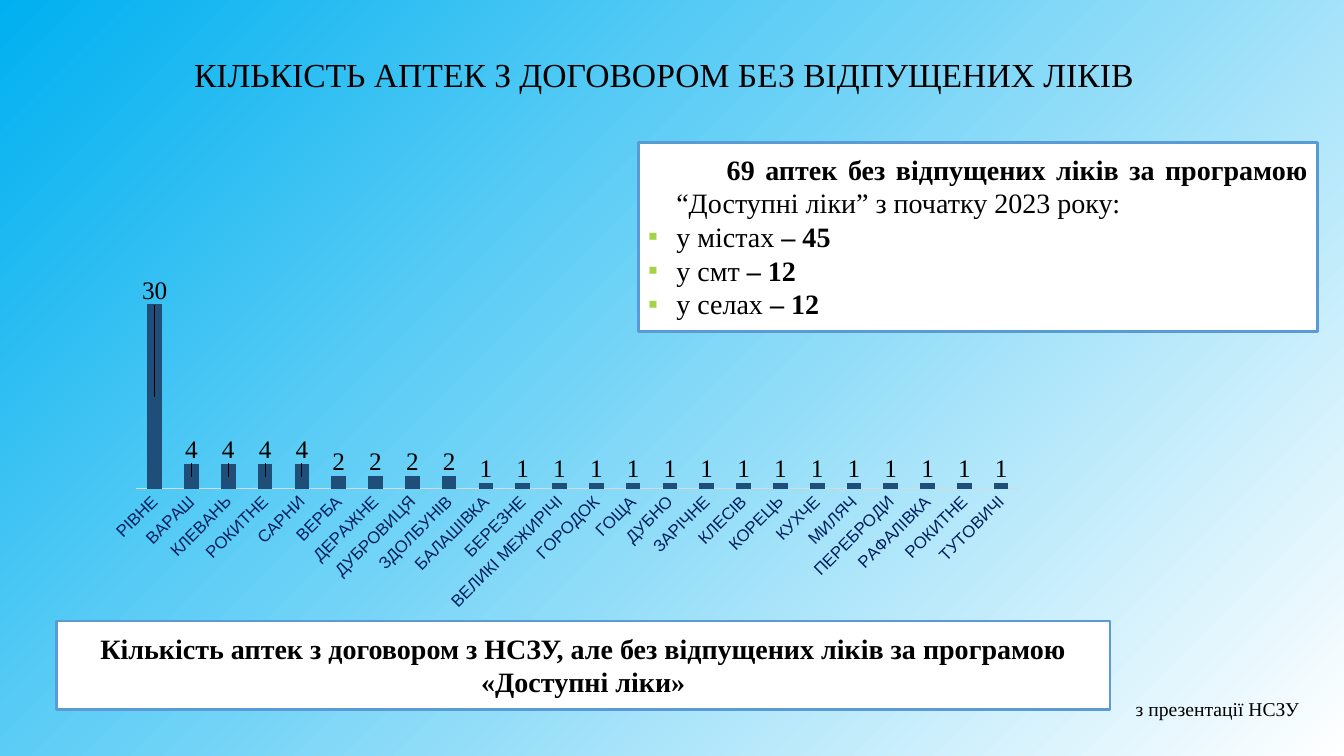
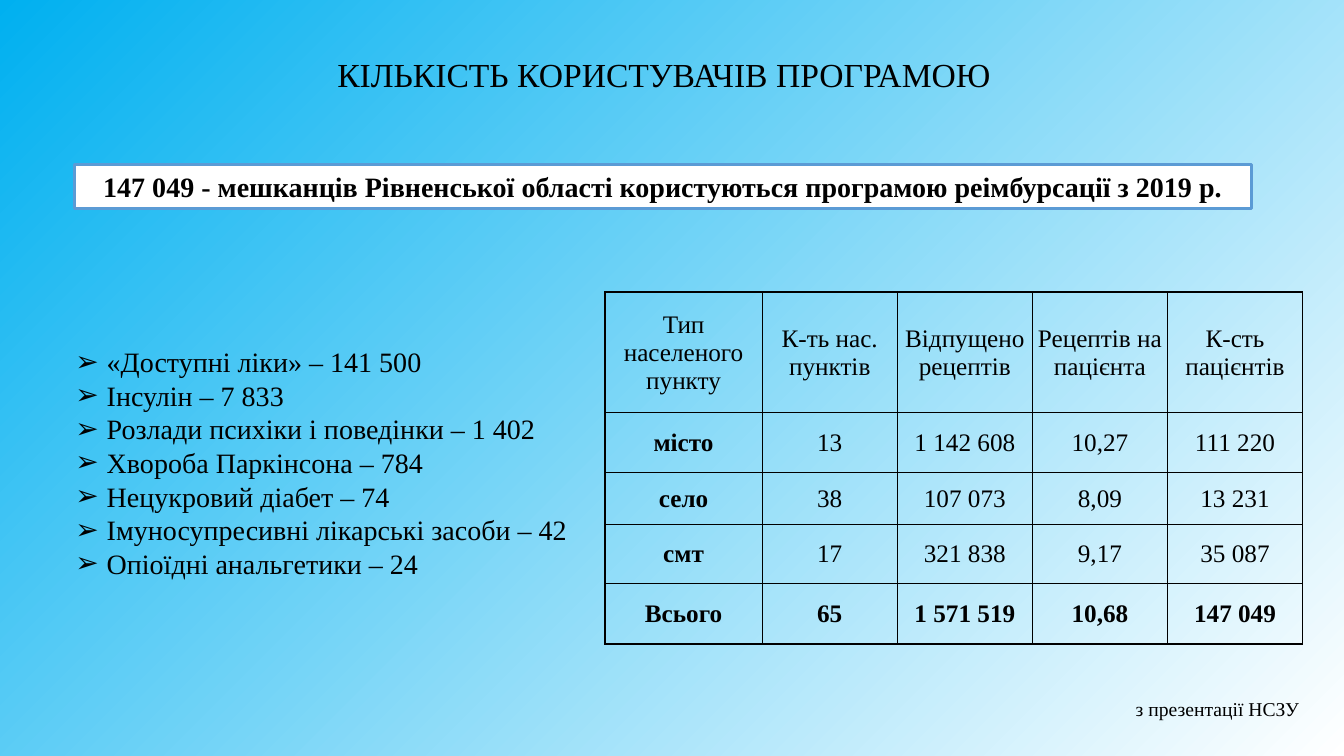
from dataclasses import dataclass

from lxml import etree
from pptx import Presentation
from pptx import util as u
from pptx.chart.data import CategoryChartData
from pptx.dml.color import RGBColor
from pptx.enum import chart as ch, shapes, text as tx
from pptx.oxml import parse_xml
from pptx.oxml.ns import nsdecls, qn

LEFT, CENTER, JUSTIFY = tx.PP_ALIGN.LEFT, tx.PP_ALIGN.CENTER, tx.PP_ALIGN.JUSTIFY
TOP, MIDDLE = tx.MSO_ANCHOR.TOP, tx.MSO_ANCHOR.MIDDLE


@dataclass(frozen=True)
class Theme:
    serif: str = "Times New Roman"
    sans: str = "Arial"
    ink: str = "000000"
    paper: str = "FFFFFF"
    sky: str = "00B0F0"
    frame: str = "5B9BD5"
    bar: str = "1F4E79"
    category: str = "002060"
    axis: str = "D9D9D9"
    bullet: str = "A3D448"
    title_size: int = 24
    body_size: int = 20
    table_size: int = 18
    source_size: int = 14
    category_size: int = 12
    chart_size: int = 10


THEME = Theme()


def rgb(value):
    return RGBColor.from_string(value)


def style_font(font, size, color=THEME.ink, name=THEME.serif, bold=False):
    font.size, font.name, font.bold = u.Pt(size), name, bold
    font.color.rgb = rgb(color)


def add_bullet(paragraph, char, color, hang):
    props = paragraph._p.get_or_add_pPr()
    props.set("marL", str(u.Inches(hang)))
    props.set("indent", str(-u.Inches(hang)))
    tint = etree.SubElement(etree.SubElement(props, qn("a:buClr")), qn("a:srgbClr"))
    tint.set("val", color)
    etree.SubElement(props, qn("a:buFont")).set("typeface", THEME.sans)
    etree.SubElement(props, qn("a:buChar")).set("char", char)


def write(frame, paragraphs, size=THEME.body_size, align=LEFT, anchor=TOP,
          bold=False, inset=(0.1, 0.05), grow=False):
    """Fill a frame; each paragraph is a string or a list of (text, bold) runs."""
    frame.word_wrap = True
    frame.vertical_anchor = anchor
    frame.margin_left = frame.margin_right = u.Inches(inset[0])
    frame.margin_top = frame.margin_bottom = u.Inches(inset[1])
    if grow:
        frame.auto_size = tx.MSO_AUTO_SIZE.SHAPE_TO_FIT_TEXT
    for index, content in enumerate(paragraphs):
        paragraph = frame.paragraphs[0] if index == 0 else frame.add_paragraph()
        paragraph.alignment = align
        runs = [(content, bold)] if isinstance(content, str) else content
        for words, heavy in runs:
            run = paragraph.add_run()
            run.text = words
            style_font(run.font, size, bold=heavy)
    return frame.paragraphs


class Deck:
    def __init__(self):
        self.prs = Presentation()
        self.prs.slide_width, self.prs.slide_height = u.Inches(13.33), u.Inches(7.5)
        self.slide = None

    def start_slide(self, title):
        """Add a slide with the shared background, title and source note."""
        self.slide = self.prs.slides.add_slide(self.prs.slide_layouts[6])
        fill = self.slide.background.fill
        fill.gradient()
        fill.gradient_angle = 315
        for stop, color, place in zip(fill.gradient_stops, (THEME.sky, THEME.paper), (0, 1)):
            stop.color.rgb, stop.position = rgb(color), place
        self.label((0.33, 0.25, 12.51, 0.97), [title], size=THEME.title_size,
                   align=CENTER, anchor=MIDDLE)
        self.label((11.01, 6.84, 2.13, 0.39), ["з презентації НСЗУ"],
                   size=THEME.source_size, align=CENTER, anchor=MIDDLE)

    def label(self, at, paragraphs, **style):
        box = self.slide.shapes.add_textbox(*map(u.Inches, at))
        return write(box.text_frame, paragraphs, **style)

    def panel(self, at, paragraphs, **style):
        box = self.slide.shapes.add_shape(shapes.MSO_SHAPE.RECTANGLE, *map(u.Inches, at))
        box.shadow.inherit = False
        box.fill.solid()
        box.fill.fore_color.rgb = rgb(THEME.paper)
        box.line.color.rgb, box.line.width = rgb(THEME.frame), u.Pt(2)
        return write(box.text_frame, paragraphs, grow=True, **style)

    def column_chart(self, at, counts):
        data = CategoryChartData(number_format="#,##0")
        data.categories = [town for town, _ in counts]
        data.add_series("Series 1", [count for _, count in counts])
        chart = self.slide.shapes.add_chart(
            ch.XL_CHART_TYPE.COLUMN_STACKED, *map(u.Inches, at), data).chart
        chart.has_legend = chart.has_title = False
        style_font(chart.font, THEME.chart_size, name=THEME.sans)

        towns, values = chart.category_axis, chart.value_axis
        towns.major_tick_mark = ch.XL_TICK_MARK.NONE
        towns.format.line.color.rgb, towns.format.line.width = rgb(THEME.axis), u.Pt(0.75)
        style_font(towns.tick_labels.font, THEME.category_size, THEME.category, THEME.sans)
        towns._element.find(qn("c:txPr")).find(qn("a:bodyPr")).set("rot", "-2700000")
        values.visible = values.has_major_gridlines = False
        values.minimum_scale, values.maximum_scale = 0, 35

        plot = chart.plots[0]
        plot.gap_width, plot.overlap, plot.vary_by_categories = 150, 100, False
        bars = plot.series[0]
        bars.format.fill.solid()
        bars.format.fill.fore_color.rgb = rgb(THEME.bar)
        self.lift_labels(bars, [count for _, count in counts], at[3])

    @staticmethod
    def lift_labels(bars, counts, chart_height, unit=0.06, gap=0.14):
        """Raise each centred value label from mid-bar to just above the bar."""
        labels = bars.data_labels
        labels.show_value, labels.number_format = True, "#,##0"
        labels.number_format_is_linked = False
        style_font(labels.font, THEME.table_size)
        for index in range(len(counts)):
            label = bars.points[index].data_label
            label.position = ch.XL_LABEL_POSITION.CENTER
            style_font(label.font, THEME.table_size)
        for count, element in zip(counts, labels._element.findall(qn("c:dLbl"))):
            shift = -(count * unit / 2 + gap) / chart_height
            element.insert(1, parse_xml(
                f'<c:layout {nsdecls("c")}><c:manualLayout><c:x val="0"/>'
                f'<c:y val="{shift:.4f}"/></c:manualLayout></c:layout>'))

    def table(self, at, widths, heights, rows):
        grid = self.slide.shapes.add_table(
            len(rows), len(widths), *map(u.Inches, at)).table
        grid.first_row = grid.horz_banding = False
        for column, width in zip(grid.columns, widths):
            column.width = u.Inches(width)
        for row, height in zip(grid.rows, heights):
            row.height = u.Inches(height)
        last = len(rows) - 1
        for r, row in enumerate(rows):
            for c, words in enumerate(row):
                cell = grid.cell(r, c)
                write(cell.text_frame, [words], size=THEME.table_size, align=CENTER,
                      bold=r == last or (c == 0 and r > 0))
                cell.vertical_anchor = MIDDLE
                cell.margin_left = cell.margin_right = cell.margin_top = u.Inches(0.01)
                cell.margin_bottom = 0
                cell.fill.background()
                self.border(cell, top=1.5 if r == 0 else 1, bottom=1.5 if r == last else 1)

    @staticmethod
    def border(cell, top, bottom):
        props = cell._tc.get_or_add_tcPr()
        sides = (("lnL", 1), ("lnR", 1), ("lnT", top), ("lnB", bottom))
        for place, (side, width) in enumerate(sides):
            props.insert(place, parse_xml(
                f'<a:{side} {nsdecls("a")} w="{u.Pt(width)}"><a:solidFill>'
                f'<a:srgbClr val="{THEME.ink}"/></a:solidFill></a:{side}>'))


IDLE_PHARMACIES = [("РІВНЕ", 30)] + [
    (town, count)
    for count, towns in (
        (4, "ВАРАШ,КЛЕВАНЬ,РОКИТНЕ,САРНИ"),
        (2, "ВЕРБА,ДЕРАЖНЕ,ДУБРОВИЦЯ,ЗДОЛБУНІВ"),
        (1, "БАЛАШІВКА,БЕРЕЗНЕ,ВЕЛИКІ МЕЖИРІЧІ,ГОРОДОК,ГОЩА,ДУБНО,ЗАРІЧНЕ,КЛЕСІВ,"
            "КОРЕЦЬ,КУХЧЕ,МИЛЯЧ,ПЕРЕБРОДИ,РАФАЛІВКА,РОКИТНЕ,ТУТОВИЧІ"),
    )
    for town in towns.split(",")
]

PROGRAMMES = [
    "«Доступні ліки» – 141 500",
    "Інсулін – 7 833",
    "Розлади психіки і поведінки – 1 402",
    "Хвороба Паркінсона – 784",
    "Нецукровий діабет – 74",
    "Імуносупресивні лікарські засоби – 42",
    "Опіоїдні анальгетики – 24",
]

SETTLEMENTS = [
    ("Тип населеного пункту", "К-ть нас. пунктів", "Відпущено рецептів",
     "Рецептів на пацієнта", "К-сть пацієнтів"),
    ("місто", "13", "1 142 608", "10,27", "111 220"),
    ("село", "38", "107 073", "8,09", "13 231"),
    ("смт", "17", "321 838", "9,17", "35 087"),
    ("Всього", "65", "1 571 519", "10,68", "147 049"),
]


def pharmacies_slide(deck):
    deck.start_slide("КІЛЬКІСТЬ АПТЕК З ДОГОВОРОМ БЕЗ ВІДПУЩЕНИХ ЛІКІВ")
    deck.panel((0.56, 6.16, 10.45, 0.88),
               ["Кількість аптек з договором з НСЗУ, але без відпущених ліків "
                "за програмою «Доступні ліки»"],
               align=CENTER, bold=True, inset=(0.1, 0.1))
    places = (("у містах ", 45), ("у смт ", 12), ("у селах ", 12))
    summary, *breakdown = deck.panel(
        (6.33, 1.41, 6.74, 1.88),
        [[("\t69 аптек без відпущених ліків за програмою ", True),
          ("“Доступні ліки” з початку 2023 року:", False)]]
        + [[(place, False), (f"– {count}", True)] for place, count in places],
        inset=(0.1, 0.1))
    summary.alignment = JUSTIFY
    summary._p.get_or_add_pPr().set("marL", str(u.Inches(0.28)))
    for line in breakdown:
        add_bullet(line, "▪", THEME.bullet, 0.28)
    deck.column_chart((0.93, 2.64, 9.37, 3.49), IDLE_PHARMACIES)


def users_slide(deck):
    deck.start_slide("КІЛЬКІСТЬ КОРИСТУВАЧІВ ПРОГРАМОЮ")
    deck.panel((0.74, 1.63, 11.67, 0.44),
               ["147 049 - мешканців Рівненської області користуються програмою "
                "реімбурсації з 2019 р."], align=CENTER, bold=True)
    deck.table((6, 2.9, 6.91, 3.48), [1.56] + [1.34] * 4,
               [1.19, 0.6, 0.51, 0.59, 0.6], SETTLEMENTS)
    for line in deck.label((0.65, 3.37, 5.25, 2.46), PROGRAMMES, grow=True):
        add_bullet(line, "➢", THEME.ink, 0.31)


def main():
    deck = Deck()
    pharmacies_slide(deck)
    users_slide(deck)
    deck.prs.save("out.pptx")


if __name__ == "__main__":
    main()
